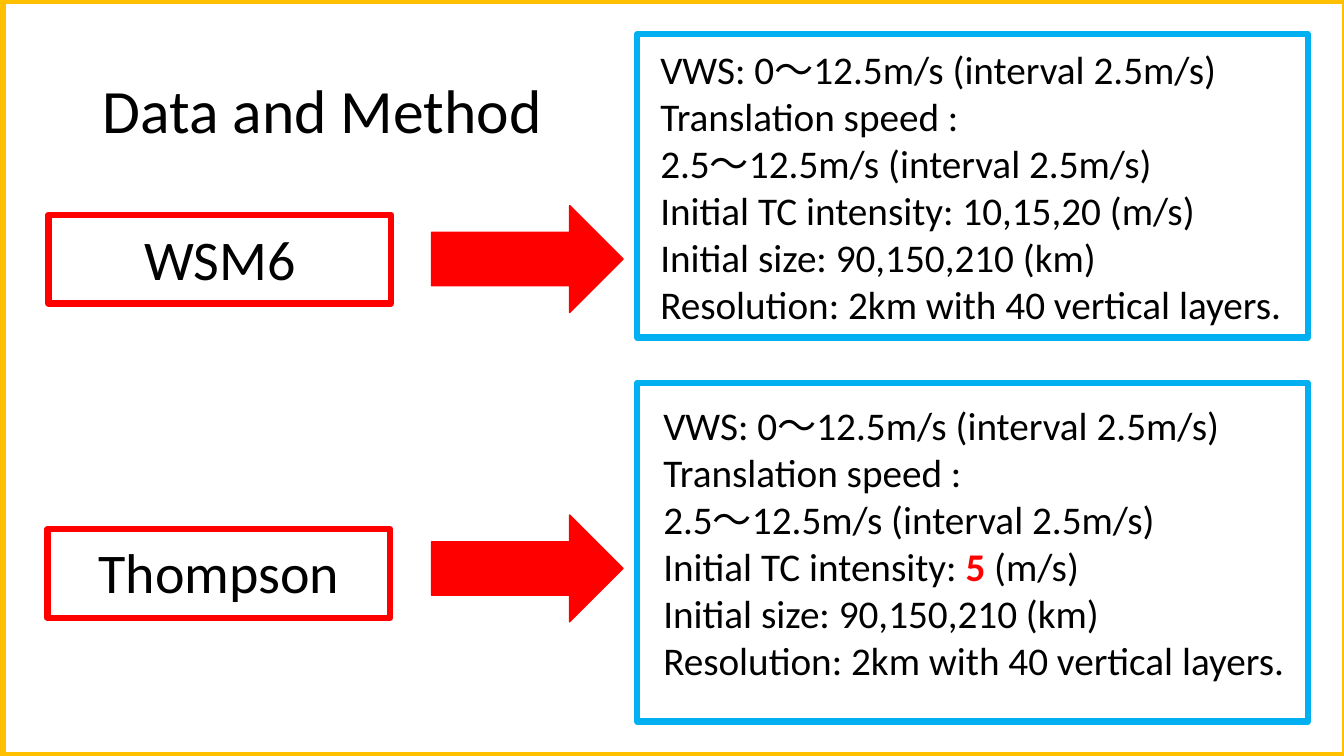
"""Build the Data and Method slide comparing two experiment setups."""
from pptx import Presentation
from pptx.dml.color import RGBColor
from pptx.enum.shapes import MSO_SHAPE
from pptx.enum.text import MSO_ANCHOR, PP_ALIGN
from pptx.util import Inches, Pt

RECT, ARROW = MSO_SHAPE.RECTANGLE, MSO_SHAPE.RIGHT_ARROW
TOP, MIDDLE = MSO_ANCHOR.TOP, MSO_ANCHOR.MIDDLE
LEFT, CENTER = PP_ALIGN.LEFT, PP_ALIGN.CENTER
BLACK = RGBColor(0, 0, 0)
RED = RGBColor(255, 0, 0)
BLUE = RGBColor(0, 176, 240)
GOLD = RGBColor(255, 192, 0)
FONT = "Calibri"
WIDE, HIGH = 13.33, 7.5

TITLE = "Data and Method"
BEFORE = [
    ["VWS: 0～12.5m/s (interval 2.5m/s)"],
    ["Translation speed :"],
    ["2.5～12.5m/s (interval 2.5m/s)"],
]
AFTER = [
    ["Initial size: 90,150,210 (km)"],
    ["Resolution: 2km with 40 vertical layers."],
]
SCHEMES = [
    {
        "name": "WSM6",
        "speed": ["Initial TC intensity: 10,15,20 (m/s)"],
        "label": (0.48, 2.13), "word": (0.07, 2.18), "arrow": 2.04,
        "panel": (0.34, 3.01), "list": (6.45, 0.4),
    },
    {
        "name": "Thompson",
        "speed": ["Initial TC intensity: ", ("5", RED), " (m/s)"],
        "label": (0.47, 5.25), "word": (0.06, 5.28), "arrow": 5.11,
        "panel": (3.8, 3.36), "list": (6.48, 3.93),
    },
]


def add_box(slide, kind, x, y, w, h, color, width, fill=None):
    box = slide.shapes.add_shape(kind, Inches(x), Inches(y), Inches(w), Inches(h))
    box.shadow.inherit = False
    box.line.color.rgb = color
    box.line.width = Pt(width)
    if fill is None:
        box.fill.background()
    else:
        box.fill.solid()
        box.fill.fore_color.rgb = fill


def add_text(slide, x, y, w, h, lines, size, align=LEFT, anchor=TOP, space=1.0):
    box = slide.shapes.add_textbox(Inches(x), Inches(y), Inches(w), Inches(h))
    frame = box.text_frame
    frame.word_wrap = True
    frame.vertical_anchor = anchor
    for i, line in enumerate(lines):
        para = frame.add_paragraph() if i else frame.paragraphs[0]
        para.alignment = align
        para.line_spacing = space
        for part in line:
            marked = isinstance(part, tuple)
            text, color = part if marked else (part, BLACK)
            run = para.add_run()
            run.text = text
            run.font.name = FONT
            run.font.size = Pt(size)
            run.font.bold = marked
            run.font.color.rgb = color


def main():
    deck = Presentation()
    deck.slide_width, deck.slide_height = Inches(WIDE), Inches(HIGH)
    slide = deck.slides.add_slide(deck.slide_layouts[6])
    add_text(slide, 0.92, 0.4, 11.5, 1.45, [[TITLE]], 44, anchor=MIDDLE, space=0.9)
    add_box(slide, RECT, 0.02, 0, WIDE, HIGH, GOLD, 6)
    for item in SCHEMES:
        top, tall = item["panel"]
        add_box(slide, RECT, *item["label"], 3.4, 0.88, RED, 4.5)
        add_text(slide, *item["word"], 4.22, 1.45, [[item["name"]]], 40, CENTER)
        add_box(slide, ARROW, 4.28, item["arrow"], 1.9, 1.06, RED, 1, RED)
        add_box(slide, RECT, 6.32, top, 6.65, tall, BLUE, 4.5)
        lines = BEFORE + [item["speed"]] + AFTER
        add_text(slide, *item["list"], 6.88, 3.4, lines, 28)
    deck.save("out.pptx")


if __name__ == "__main__":
    main()
